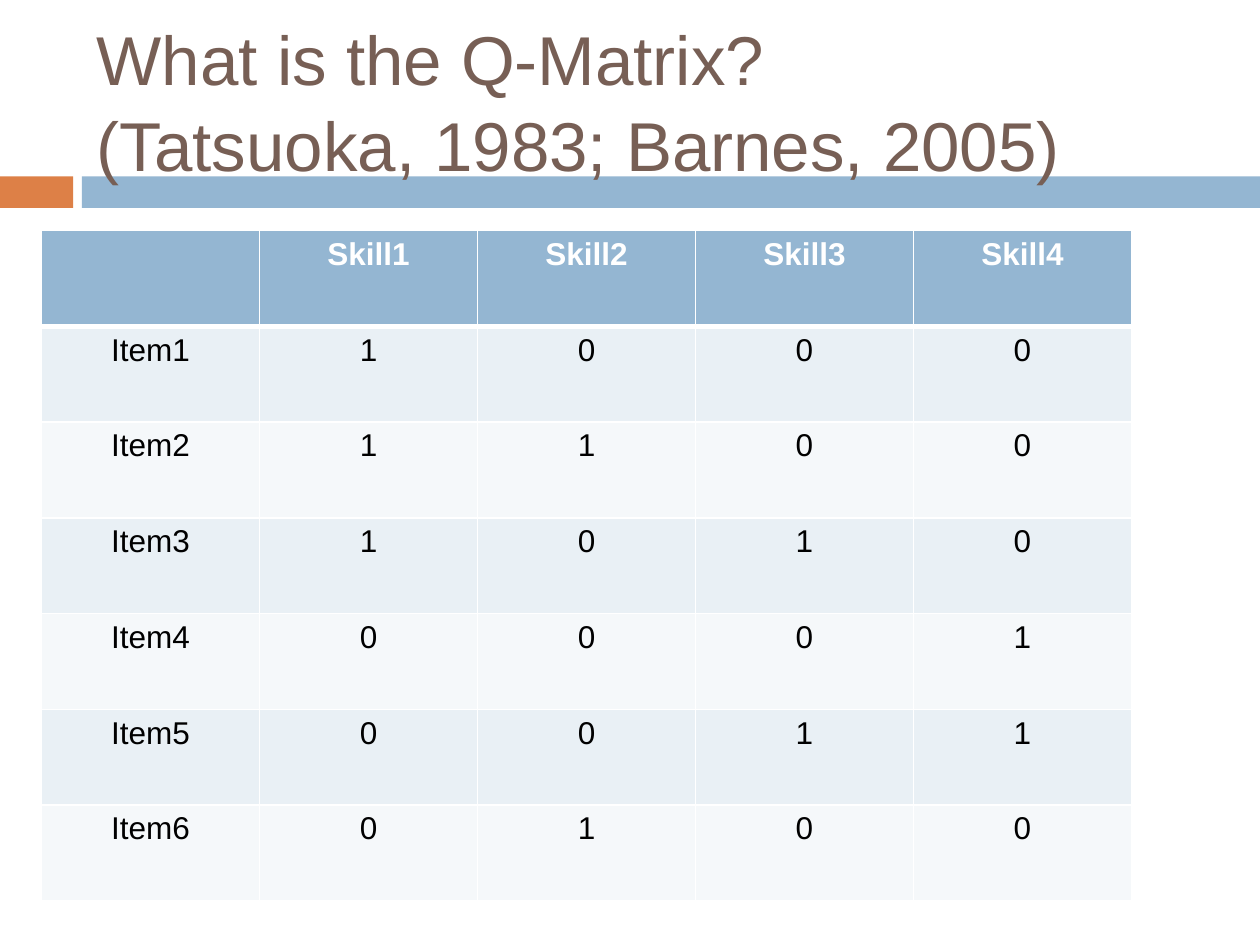
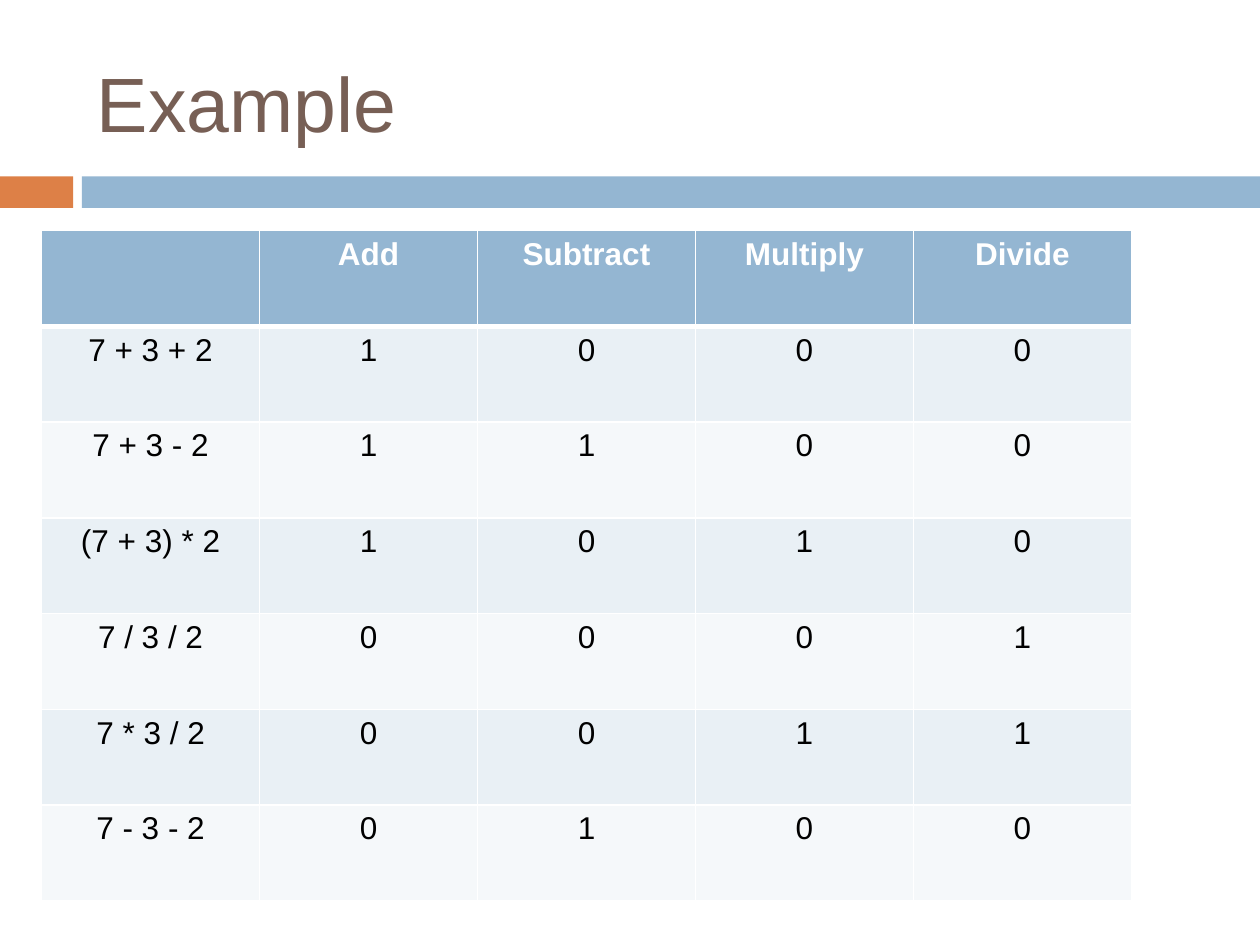
from lxml import etree
from pptx import Presentation
from pptx import util as u
from pptx.dml.color import RGBColor
from pptx.enum import shapes, text
from pptx.oxml.ns import qn

FONT = "Arial"
WHITE, BLACK, BROWN = "FFFFFF", "000000", "775F55"
BLUE, ORANGE = "94B6D2", "DD8047"
STRIPES = ["F5F8FA", "E9F0F5"]
COL, ROW = 1.73, 0.76
BANDS = [(0, 0.58, ORANGE), (0.65, 9.35, BLUE)]

# One row per item, one column per skill
MATRIX = ["1000", "1100", "1010", "0001", "0011", "0100"]
SLIDES = [
    (["What is the Q-Matrix?", "(Tatsuoka, 1983; Barnes, 2005)"], 39.5,
     [f"Skill{n}" for n in range(1, 5)],
     [f"Item{n}" for n in range(1, 7)]),
    (["Example"], 44,
     ["Add", "Subtract", "Multiply", "Divide"],
     ["7 + 3 + 2", "7 + 3 - 2", "(7 + 3) * 2",
      "7 / 3 / 2", "7 * 3 / 2", "7 - 3 - 2"]),
]


def paint(target, color):
    """Give a fill or a font a solid colour from a hex string."""
    if hasattr(target, "solid"):
        target.solid()
        target.fore_color.rgb = RGBColor.from_string(color)
    else:
        target.color.rgb = RGBColor.from_string(color)


def write(para, words, size, color, bold=False):
    run = para.add_run()
    run.text = words
    run.font.name, run.font.size, run.font.bold = FONT, u.Pt(size), bold
    paint(run.font, color)


deck = Presentation()
deck.slide_width, deck.slide_height = u.Inches(10), u.Inches(7.5)

for lines, size, skills, items in SLIDES:
    slide = deck.slides.add_slide(deck.slide_layouts[6])

    for left, width, color in BANDS:
        band = slide.shapes.add_shape(
            shapes.MSO_SHAPE.RECTANGLE, u.Inches(left), u.Inches(1.4),
            u.Inches(width), u.Inches(0.25))
        band.shadow.inherit = False
        paint(band.fill, color)
        band.line.fill.background()

    title = slide.shapes.add_textbox(
        u.Inches(0.67), u.Inches(0.25), u.Inches(8.92), u.Inches(1.08))
    frame = title.text_frame
    frame.word_wrap = True
    frame.vertical_anchor = text.MSO_ANCHOR.MIDDLE
    para = frame.paragraphs[0]
    para.line_spacing = 1.04
    for n, line in enumerate(lines):
        if n:
            para.add_line_break()
        write(para, line, size, BROWN)

    rows = [["", *skills]]
    rows += [[item, *marks] for item, marks in zip(items, MATRIX)]
    high, wide = len(rows), len(rows[0])
    grid = slide.shapes.add_table(
        high, wide, u.Inches(0.33), u.Inches(1.83),
        u.Inches(COL * wide), u.Inches(ROW * high)).table
    grid.horz_banding = False
    for col in grid.columns:
        col.width = u.Inches(COL)
    for r, row in enumerate(rows):
        grid.rows[r].height = u.Inches(ROW)
        head = r == 0
        for c, words in enumerate(row):
            cell = grid.cell(r, c)
            # The rule under the header is three times as thick
            sides = {"L": 1, "R": 1, "T": 3 if r == 1 else 1, "B": 3 if head else 1}
            props = cell._tc.get_or_add_tcPr()
            for side, width in sides.items():
                edge = etree.SubElement(props, qn(f"a:ln{side}"), w=str(u.Pt(width)))
                fill = etree.SubElement(edge, qn("a:solidFill"))
                etree.SubElement(fill, qn("a:srgbClr"), val=WHITE)
            paint(cell.fill, BLUE if head else STRIPES[r % 2])
            para = cell.text_frame.paragraphs[0]
            para.alignment = text.PP_ALIGN.CENTER
            if words:
                write(para, words, 18, WHITE if head else BLACK, head)

deck.save("out.pptx")
